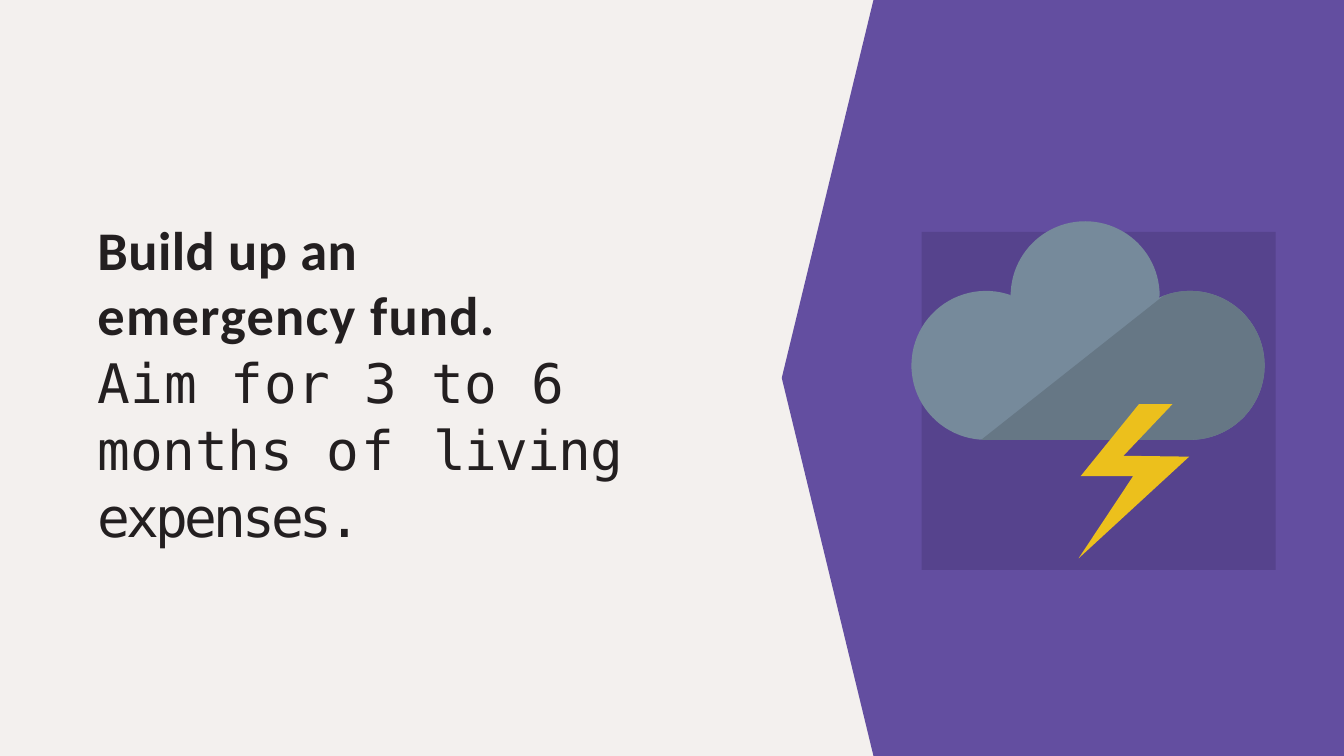
from math import cos, radians, sin

from pptx import Presentation
from pptx.dml.color import RGBColor
from pptx.enum.shapes import MSO_SHAPE
from pptx.enum.text import MSO_ANCHOR, MSO_AUTO_SIZE, PP_ALIGN
from pptx.util import Cm, Pt

WIDE, HIGH = 30.48, 17.15
COLORS = {
    "paper": "F3F0EE",
    "wedge": "634EA0",
    "panel": "56438D",
    "cloud": "768A9B",
    "shade": "667785",
    "bolt": "ECC01C",
    "ink": "231F20",
}
PUFF = 1.69
LEFT, TOP, RIGHT = (22.36, 8.29), (24.61, 6.71), (26.99, 8.29)
HEAD = [("Build up an", 0.3), ("\n", 0), ("emergency fund.", 0.8)]
BODY = [
    ("Aim for 3 to 6 ", 0.4),
    ("months ", -0.1),
    ("of ", 1.8),
    ("living ", -0.9),
    ("expenses.", -2.5),
]


def color(name):
    return RGBColor.from_string(COLORS[name])


def paint(shape, name):
    shape.shadow.inherit = False
    shape.fill.solid()
    shape.fill.fore_color.rgb = color(name)
    shape.line.fill.background()


def add_outline(slide, points, name):
    start, *rest = [(Cm(x), Cm(y)) for x, y in points]
    builder = slide.shapes.build_freeform(*start)
    builder.add_line_segments(rest, close=True)
    paint(builder.convert_to_shape(), name)


def add_panel(slide, left, top, width, height, name):
    box = slide.shapes.add_shape(
        MSO_SHAPE.RECTANGLE, Cm(left), Cm(top), Cm(width), Cm(height)
    )
    paint(box, name)


def arc(center, start, end, steps=48):
    x, y = center
    turns = [radians(start + (end - start) * i / steps) for i in range(steps + 1)]
    return [(x + PUFF * cos(t), y + PUFF * sin(t)) for t in turns]


def add_cloud(slide):
    edge = arc(LEFT, 90, 290) + arc(TOP, 180, 360) + arc(RIGHT, 245, 450)
    add_outline(slide, edge, "cloud")
    add_outline(slide, [(22.25, 9.98)] + arc(RIGHT, 249, 450), "shade")


def fill_text(para, parts, face, bold, space):
    para.alignment = PP_ALIGN.LEFT
    para.line_spacing = space
    font = para.font
    font.name, font.size, font.bold = face, Pt(35), bold
    font.color.rgb = color("ink")
    for text, gap in parts:
        if text == "\n":
            para.add_line_break()
            continue
        run = para.add_run()
        run.text = text
        run._r.get_or_add_rPr().set("spc", str(round(gap * 100)))


def set_title(slide):
    title = slide.shapes.title
    title.left, title.top = Cm(2.21), Cm(4.9)
    title.width, title.height = Cm(12.52), Cm(5.74)
    frame = title.text_frame
    frame.margin_left = frame.margin_right = Cm(0)
    frame.margin_top = frame.margin_bottom = Cm(0)
    frame.word_wrap = True
    frame.auto_size = MSO_AUTO_SIZE.SHAPE_TO_FIT_TEXT
    frame.vertical_anchor = MSO_ANCHOR.TOP
    fill_text(frame.paragraphs[0], HEAD, "Calibri", True, 1.0)
    fill_text(frame.add_paragraph(), BODY, "DejaVu Sans Mono", False, 1.03)


def main():
    deck = Presentation()
    deck.slide_width, deck.slide_height = Cm(WIDE), Cm(HIGH)
    slide = deck.slides.add_slide(deck.slide_layouts[5])
    back = slide.background.fill
    back.solid()
    back.fore_color.rgb = color("paper")

    set_title(slide)
    wedge = [(WIDE, 0), (19.81, 0), (17.73, HIGH / 2), (19.81, HIGH), (WIDE, HIGH)]
    add_outline(slide, wedge, "wedge")
    add_panel(slide, 20.9, 5.26, 8.03, 7.67, "panel")
    add_cloud(slide)
    bolt = [
        (26.59, 9.17), (25.83, 9.17), (24.51, 10.8), (25.7, 10.8),
        (24.46, 12.67), (26.97, 10.36), (25.48, 10.34),
    ]
    add_outline(slide, bolt, "bolt")
    deck.save("out.pptx")


if __name__ == "__main__":
    main()
